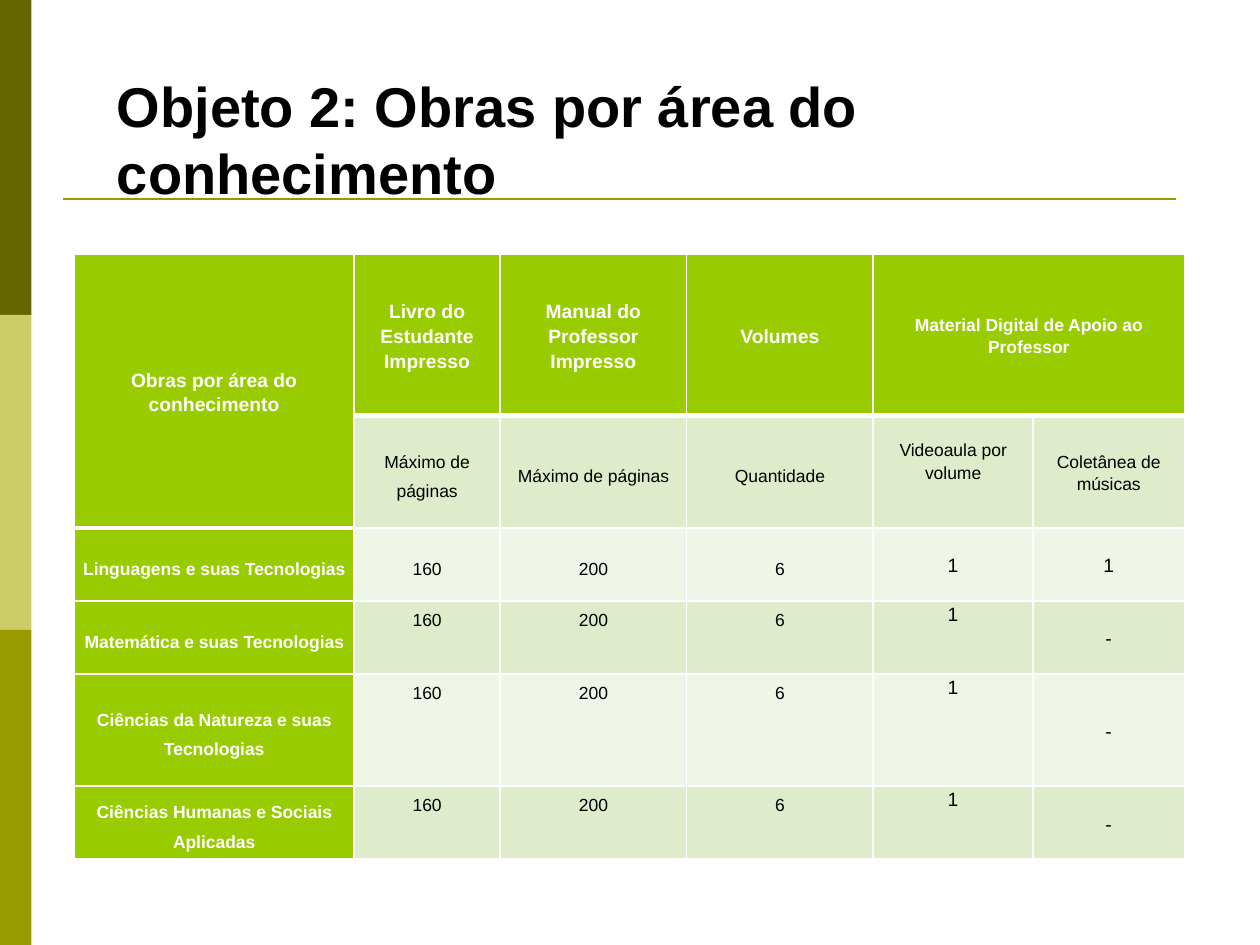
import pptx
import pptx.util
import pptx.dml.color
import pptx.enum.shapes
import pptx.enum.text
import pptx.oxml
import pptx.oxml.ns
from lxml import etree

Inches, Pt = pptx.util.Inches, pptx.util.Pt
MIDDLE, TOP = pptx.enum.text.MSO_ANCHOR.MIDDLE, pptx.enum.text.MSO_ANCHOR.TOP

TITLE = "Objeto 2: Obras por área do conhecimento"
HEADINGS = ["Obras por área do conhecimento", "Livro do Estudante Impresso",
            "Manual do Professor Impresso", "Volumes",
            "Material Digital de Apoio ao Professor", ""]
MEASURES = ["", "Máximo de páginas", "Máximo de páginas", "Quantidade",
            "Videoaula por volume", "Coletânea de músicas"]
AREAS = [
    ["Linguagens e suas Tecnologias", "160", "200", "6", "1", "1"],
    ["Matemática e suas Tecnologias", "160", "200", "6", "1", "-"],
    ["Ciências da Natureza e suas Tecnologias", "160", "200", "6", "1", "-"],
    ["Ciências Humanas e Sociais Aplicadas", "160", "200", "6", "1", "-"],
]
COLORS = {"dark": "666600", "pale": "CCCC66", "olive": "999900", "header": "99CC00",
          "band": "DEECCC", "light": "EFF6E7", "white": "FFFFFF", "black": "000000"}
COLUMN_WIDTHS = [2.22, 1.16, 1.48, 1.48, 1.27, 1.2]
ROW_HEIGHTS = [1.28, 0.89, 0.58, 0.58, 0.89, 0.58]
SLIDE_WIDTH, SLIDE_HEIGHT = 10, 7.5
DIGITAL = 4  # first column of the digital material


def color(name):
    return pptx.dml.color.RGBColor.from_string(COLORS[name])


def apply(target, formats):
    for attribute, value in formats.items():
        setattr(target, attribute, value)


def style_font(font, size, name, bold):
    apply(font, {"name": "Arial", "size": Pt(size), "bold": bold})
    font.color.rgb = color(name)


def add_sidebar(slide):
    names = ["dark", "pale", "olive"]
    height = SLIDE_HEIGHT / len(names)
    for index, name in enumerate(names):
        band = slide.shapes.add_shape(
            pptx.enum.shapes.MSO_SHAPE.RECTANGLE, 0, Inches(index * height),
            Inches(SLIDE_WIDTH / 40), Inches(height))
        band.shadow.inherit = False
        band.fill.solid()
        band.fill.fore_color.rgb = color(name)
        band.line.fill.background()


def add_rule(slide):
    rule = slide.shapes.add_connector(
        pptx.enum.shapes.MSO_CONNECTOR.STRAIGHT,
        Inches(0.5), Inches(1.58), Inches(9.33), Inches(1.58))
    rule.line.color.rgb = color("olive")
    rule.line.width = Pt(1.5)
    etree.SubElement(rule._element.spPr, pptx.oxml.ns.qn("a:effectLst"))


def add_title(slide):
    frame = slide.shapes.add_textbox(
        Inches(0.83), Inches(0.52), Inches(7.56), Inches(1.18)).text_frame
    frame.word_wrap = True
    frame.text = TITLE
    style_font(frame.paragraphs[0].runs[0].font, 32, "black", True)


def is_header(row, column):
    return row == 0 or column == 0


def add_borders(cell, row, column):
    """White grid, thicker below the two-level header."""
    first_body_row = 2 if column == 0 else 1
    widths = {"L": 1, "R": 1,
              "T": 3 if row == first_body_row else 1,
              "B": 3 if row == first_body_row - 1 else 1}
    for side, width in widths.items():
        cell._tc.get_or_add_tcPr().append(pptx.oxml.parse_xml(
            f'<a:ln{side} {pptx.oxml.ns.nsdecls("a")} w="{Pt(width)}"><a:solidFill>'
            f'<a:srgbClr val="{COLORS["white"]}"/></a:solidFill></a:ln{side}>'))


def style_cell(cell, row, column):
    header = is_header(row, column)
    digital = column >= DIGITAL
    in_top_rows = row >= 3 and 0 < column <= DIGITAL
    add_borders(cell, row, column)
    cell.fill.solid()
    cell.fill.fore_color.rgb = color(
        "header" if header else "band" if row % 2 else "light")
    apply(cell, {
        "margin_left": Inches(0.07), "margin_right": Inches(0.07), "margin_top": 0,
        "margin_bottom": Inches(0.18) if (row, column) == (1, DIGITAL) else 0,
        "vertical_anchor": TOP if in_top_rows else MIDDLE})
    large = (row == 0 and not digital) or (row >= 2 and digital)
    for paragraph in cell.text_frame.paragraphs:
        apply(paragraph, {"alignment": pptx.enum.text.PP_ALIGN.CENTER,
                          "line_spacing": 1.15 if row == 0 or digital else 1.5})
        style_font(paragraph.font, 11 if large else 10,
                   "white" if header else "black", header)
        for run in paragraph.runs:
            style_font(run.font, 11 if large else 10,
                       "white" if header else "black", header)


def add_works_table(slide):
    rows = [HEADINGS, MEASURES, *AREAS]
    table = slide.shapes.add_table(
        len(rows), len(HEADINGS), Inches(0.59), Inches(2.02),
        Inches(sum(COLUMN_WIDTHS)), Inches(sum(ROW_HEIGHTS))).table
    for column, width in zip(table.columns, COLUMN_WIDTHS):
        column.width = Inches(width)
    for row, height in zip(table.rows, ROW_HEIGHTS):
        row.height = Inches(height)
    for row, texts in enumerate(rows):
        for column, text in enumerate(texts):
            cell = table.cell(row, column)
            cell.text = text
            style_cell(cell, row, column)
    table.cell(0, 0).merge(table.cell(1, 0))
    table.cell(0, DIGITAL).merge(table.cell(0, DIGITAL + 1))


def main():
    deck = pptx.Presentation()
    apply(deck, {"slide_width": Inches(SLIDE_WIDTH), "slide_height": Inches(SLIDE_HEIGHT)})
    slide = deck.slides.add_slide(deck.slide_layouts[6])
    for add_part in (add_sidebar, add_rule, add_works_table, add_title):
        add_part(slide)
    deck.save("out.pptx")


if __name__ == "__main__":
    main()
